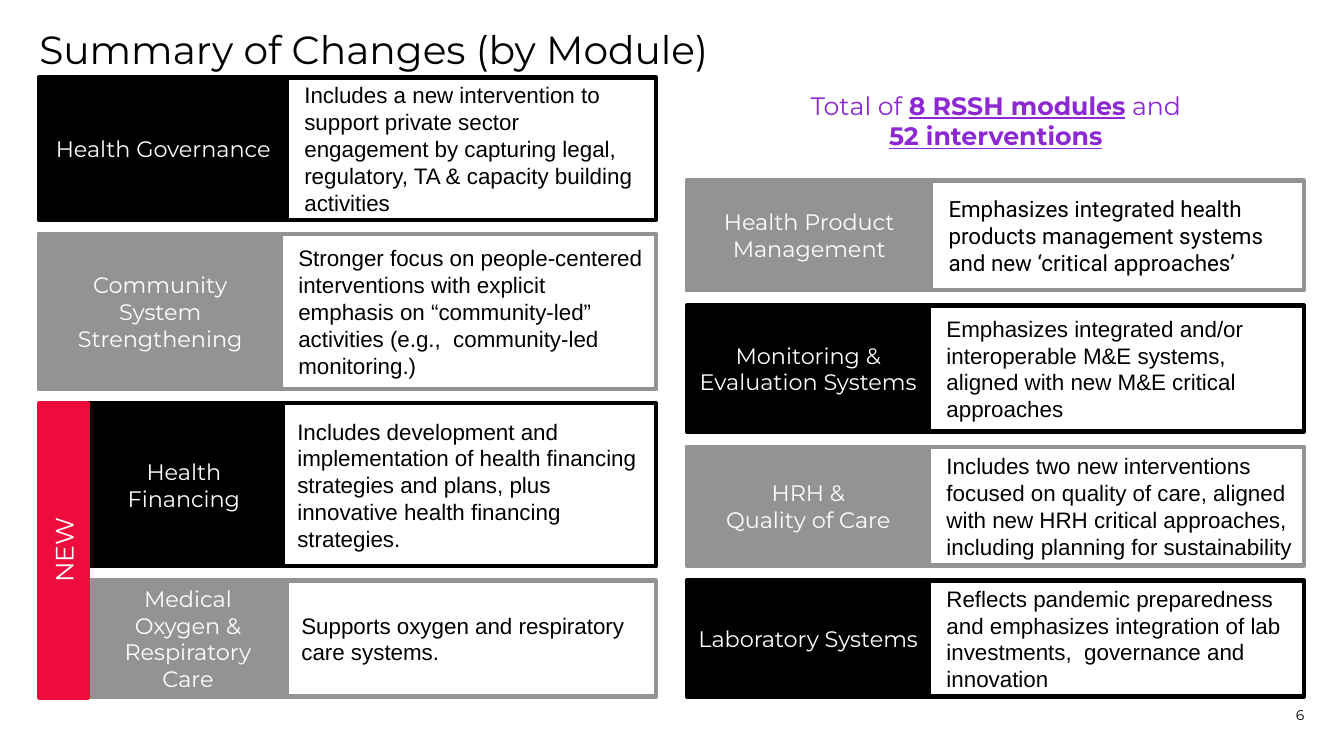
from dataclasses import dataclass

from pptx import Presentation
from pptx.dml.color import RGBColor
from pptx.enum.shapes import MSO_SHAPE
from pptx.enum.text import MSO_ANCHOR, PP_ALIGN
from pptx.util import Pt


@dataclass(frozen=True)
class Theme:
    black: RGBColor = RGBColor.from_string("000000")
    grey: RGBColor = RGBColor.from_string("939393")
    white: RGBColor = RGBColor.from_string("FFFFFF")
    red: RGBColor = RGBColor.from_string("EE0C3D")
    purple: RGBColor = RGBColor.from_string("8C29D3")
    head_font: str = "Montserrat"
    body_font: str = "Arial"
    alt_font: str = "Roboto"
    title_size: float = 28
    accent_size: float = 18
    body_size: float = 16
    number_size: float = 10
    line_width: float = 3


@dataclass(frozen=True)
class Box:
    left: float
    top: float
    width: float
    height: float

    def lengths(self) -> tuple:
        return Pt(self.left), Pt(self.top), Pt(self.width), Pt(self.height)


@dataclass(frozen=True)
class Module:
    name: tuple
    summary: str
    frame: Box
    label_width: float
    text_left: float
    color: RGBColor
    text_width: float = 247.7
    text_pad: float = 10.8  # gap between frame and summary, top and bottom
    space_after: float = 0
    font: str = Theme.body_font


T = Theme()
LEFT, RIGHT, COL_W = 28.1, 491, 440.6
LAST_TOP, LAST_H = 414.7, 82.8  # bottom row, shared by both columns

MODULES = [
    Module(("Health Governance",),
           "Includes a new intervention to support private sector engagement by "
           "capturing legal, regulatory, TA & capacity building activities",
           Box(LEFT, 55.4, COL_W, 101.5), 177.1, 217.4, T.black, 243.4, 13),
    Module(("Medical Oxygen & Respiratory Care",),
           "Supports oxygen and respiratory care systems.",
           Box(63.4, LAST_TOP, 405.3, LAST_H), 141.8, 215.3, T.grey, 249.8),
    Module(("Community System Strengthening",),
           "Stronger focus on people-centered interventions with explicit emphasis on "
           "“community-led” activities (e.g.,  community-led monitoring.)",
           Box(LEFT, 167, COL_W, 110.9), 172.8, 213.1, T.grey, text_pad=14),
    Module(("Monitoring & Evaluation Systems",),
           "Emphasizes integrated and/or interoperable M&E systems, aligned with new "
           "M&E critical approaches",
           Box(RIGHT, 218.2, COL_W, 90), 172.8, 676.1, T.black),
    Module(("Health Financing",),
           "Includes development and implementation of health financing strategies and "
           "plans, plus innovative health financing strategies.",
           Box(60.5, 288, 408.2, 116.6), 141.8, 212.4, T.black, 256.3, 0, 12),
    Module(("HRH &", "Quality of Care"),
           "Includes two new interventions focused on quality of care, aligned with new "
           "HRH critical approaches, including planning for sustainability",
           Box(RIGHT, 319, COL_W, 85), 172.8, 676.1, T.grey),
    Module(("Health Product Management",),
           "Emphasizes integrated health products management systems and new "
           "‘critical approaches’",
           Box(RIGHT, 128.9, COL_W, 78.5), 174.2, 677.5, T.grey, 246.2, 10,
           font=T.alt_font),
    Module(("Laboratory Systems",),
           "Reflects pandemic preparedness and emphasizes integration of lab "
           "investments,  governance and innovation",
           Box(RIGHT, LAST_TOP, COL_W, LAST_H), 172.8, 676.1, T.black),
]


def style(p, font: str, size: float, color: RGBColor, align=PP_ALIGN.LEFT) -> None:
    p.alignment = align
    p.font.name = font
    p.font.size = Pt(size)
    p.font.color.rgb = color


def add_text(shapes, box: Box, text: str, font: str, size: float,
             anchor=MSO_ANCHOR.MIDDLE, align=PP_ALIGN.LEFT):
    """Add a text box without margins and return its paragraph."""
    tf = shapes.add_textbox(*box.lengths()).text_frame
    tf.word_wrap = True
    tf.vertical_anchor = anchor
    tf.margin_left = tf.margin_top = tf.margin_right = tf.margin_bottom = 0
    p = tf.paragraphs[0]
    p.text = text
    style(p, font, size, T.black, align)
    return p


def add_rect(shapes, box: Box, color: RGBColor, filled: bool = True):
    sp = shapes.add_shape(MSO_SHAPE.RECTANGLE, *box.lengths())
    sp.shadow.inherit = False
    sp.line.color.rgb = color
    sp.line.width = Pt(T.line_width)
    if filled:
        sp.fill.solid()
        sp.fill.fore_color.rgb = color
    else:
        sp.fill.background()
    return sp


def add_label(shapes, box: Box, color: RGBColor, lines: tuple, size: float):
    """Add a filled rectangle with centred white text."""
    sp = add_rect(shapes, box, color)
    tf = sp.text_frame
    tf.word_wrap = True
    tf.vertical_anchor = MSO_ANCHOR.MIDDLE
    tf.text = "\n".join(lines)
    for p in tf.paragraphs:
        style(p, T.head_font, size, T.white, PP_ALIGN.CENTER)
    return sp


def add_module(s, m: Module) -> None:
    shapes = s.shapes.add_group_shape().shapes
    f = m.frame
    text_box = Box(m.text_left, f.top + m.text_pad, m.text_width,
                   f.height - 2 * m.text_pad)
    p = add_text(shapes, text_box, m.summary, m.font, T.body_size)
    if m.space_after:
        p.space_after = Pt(m.space_after)
    add_rect(shapes, f, m.color, filled=False)
    add_label(shapes, Box(f.left, f.top, m.label_width, f.height), m.color,
              m.name, T.body_size)


def add_total(s) -> None:
    tf = s.shapes.add_textbox(*Box(RIGHT, 60.5, COL_W, 51.1).lengths()).text_frame
    tf.word_wrap = True
    tf.vertical_anchor = MSO_ANCHOR.MIDDLE
    lines = [
        [("Total of ", False), ("8 RSSH modules", True), (" and", False)],
        [("52 interventions", True)],
    ]
    for i, line in enumerate(lines):
        p = tf.add_paragraph() if i else tf.paragraphs[0]
        style(p, T.head_font, T.accent_size, T.purple, PP_ALIGN.CENTER)
        for text, strong in line:
            r = p.add_run()
            r.text = text
            if strong:
                r.font.bold = r.font.underline = True


def main() -> None:
    prs = Presentation()
    prs.slide_width, prs.slide_height = Pt(960), Pt(540)
    s = prs.slides.add_slide(prs.slide_layouts[6])

    # Slide number and title
    add_text(s.shapes, Box(861.1, 488.2, 70.6, 28.8), "6", T.head_font,
             T.number_size, MSO_ANCHOR.BOTTOM, PP_ALIGN.RIGHT)
    title = add_text(s.shapes, Box(LEFT, 21.6, 903.6, 36.7),
                     "Summary of Changes (by Module)", T.head_font,
                     T.title_size, MSO_ANCHOR.TOP)
    title.line_spacing = 0.9

    # Module cards
    for m in MODULES:
        add_module(s, m)

    # Vertical tag beside the two new modules
    tag = add_label(s.shapes, Box(LEFT, 288, 34.6, 210.2), T.red, ("NEW",),
                    T.accent_size)
    tag.element.txBody.bodyPr.set("vert", "vert270")

    # Total above the right column
    add_total(s)

    prs.save("out.pptx")


if __name__ == "__main__":
    main()
